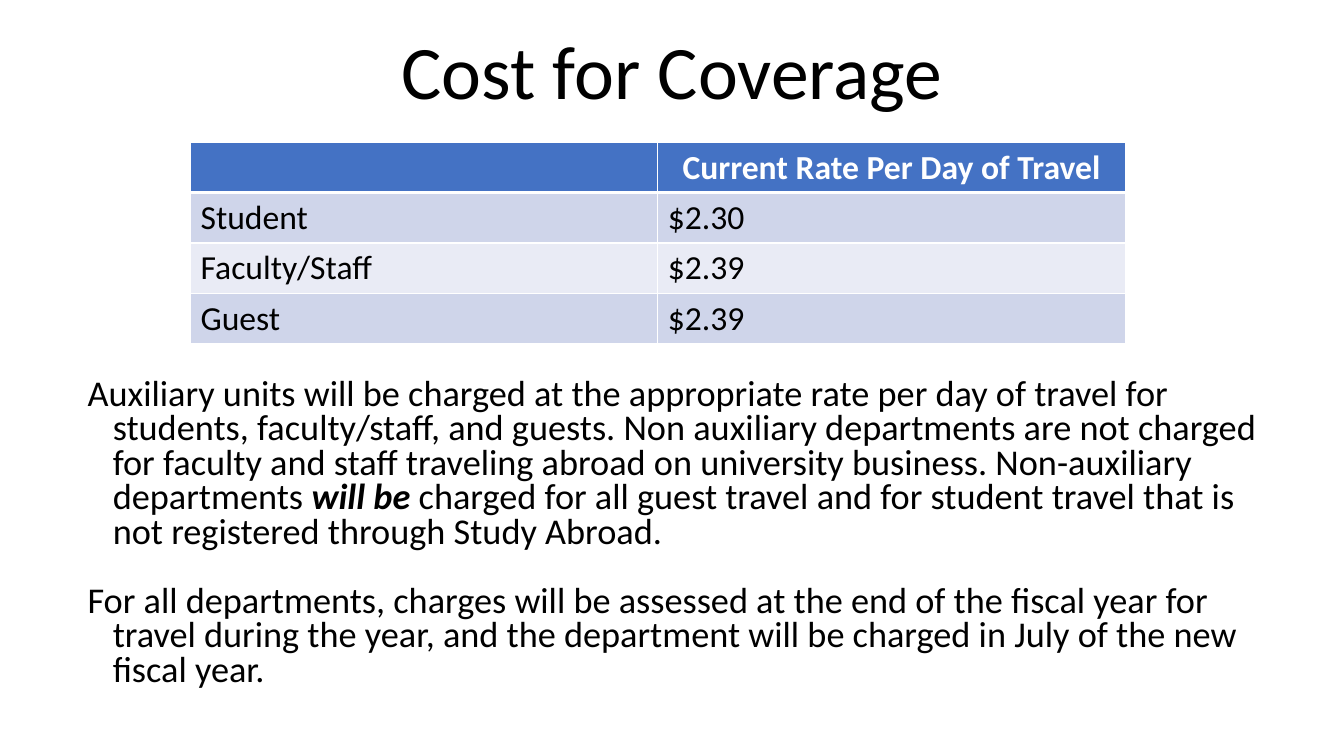
from lxml import etree
from pptx import Presentation
from pptx.dml.color import RGBColor
from pptx.enum.text import MSO_ANCHOR, PP_ALIGN
from pptx.oxml.ns import qn
from pptx.util import Inches, Pt

CENTER, LEFT = PP_ALIGN.CENTER, PP_ALIGN.LEFT
MIDDLE, TOP = MSO_ANCHOR.MIDDLE, MSO_ANCHOR.TOP
FONT = "Calibri"
BLACK = RGBColor(0x00, 0x00, 0x00)
WHITE = RGBColor(0xFF, 0xFF, 0xFF)
HEADER_BLUE = RGBColor(0x44, 0x72, 0xC4)
BAND_DARK = RGBColor(0xCF, 0xD5, 0xEA)
BAND_LIGHT = RGBColor(0xE9, 0xEB, 0xF5)

RATES = [
    ("", "Current Rate Per Day of Travel"),
    ("Student", "$2.30"),
    ("Faculty/Staff", "$2.39"),
    ("Guest", "$2.39"),
]
# Each paragraph is a list of (text, emphasized) pairs.
POLICY = [
    [("Auxiliary units will be charged at the appropriate rate per day of travel for "
      "students, faculty/staff, and guests. Non auxiliary departments are not charged "
      "for faculty and staff traveling abroad on university business. Non-auxiliary "
      "departments ", False),
     ("will be ", True),
     ("charged for all guest travel and for student travel that is not registered "
      "through Study Abroad.", False)],
    [("For all departments, charges will be assessed at the end of the fiscal year for "
      "travel during the year, and the department will be charged in July of the new "
      "fiscal year.", False)],
]


def style_font(font, size, color=BLACK, bold=False, italic=False):
    font.name = FONT
    font.size = Pt(size)
    font.color.rgb = color
    font.bold = bold
    font.italic = italic


def add_text_frame(slide, left, top, width, height, anchor):
    frame = slide.shapes.add_textbox(
        Inches(left), Inches(top), Inches(width), Inches(height)).text_frame
    frame.word_wrap = True
    frame.vertical_anchor = anchor
    return frame


def add_title(slide, left, top, width, height):
    heading = add_text_frame(slide, left, top, width, height, MIDDLE).paragraphs[0]
    heading.text = "Cost for Coverage"
    heading.alignment = CENTER
    style_font(heading.runs[0].font, 54)


def set_cell_borders(cell, bottom_width):
    """Draw white 1 pt edges, with the bottom one as wide as given."""
    properties = cell._tc.get_or_add_tcPr()
    for edge, width in (("lnL", 1), ("lnR", 1), ("lnT", 1), ("lnB", bottom_width)):
        line = etree.SubElement(properties, qn(f"a:{edge}"), w=str(Pt(width)))
        fill = etree.SubElement(line, qn("a:solidFill"))
        etree.SubElement(fill, qn("a:srgbClr"), val=str(WHITE))


def add_rate_table(slide, left, top, width, height):
    table = slide.shapes.add_table(
        len(RATES), len(RATES[0]),
        Inches(left), Inches(top), Inches(width), Inches(height)).table
    for row_index, row in enumerate(RATES):
        is_header = row_index == 0
        band = BAND_DARK if row_index % 2 else BAND_LIGHT
        for column_index, entry in enumerate(row):
            cell = table.cell(row_index, column_index)
            set_cell_borders(cell, 3 if is_header else 1)
            cell.fill.solid()
            cell.fill.fore_color.rgb = HEADER_BLUE if is_header else band
            label = cell.text_frame.paragraphs[0]
            label.text = entry
            label.alignment = CENTER if is_header else LEFT
            for run in label.runs:
                style_font(run.font, 24, WHITE if is_header else BLACK, is_header)
    # The top edge of the first body row shares the header's heavy rule.
    for cell in table.rows[1].cells:
        cell._tc.tcPr.find(qn("a:lnT")).set("w", str(Pt(3)))


def add_policy(slide, left, top, width, height):
    frame = add_text_frame(slide, left, top, width, height, TOP)
    for index, pieces in enumerate(POLICY):
        paragraph = frame.add_paragraph() if index else frame.paragraphs[0]
        paragraph.line_spacing = 0.79
        paragraph.space_before = Pt(25 if index else 0)
        indents = paragraph._p.get_or_add_pPr()
        indents.set("marL", str(Inches(0.25)))
        indents.set("indent", str(Inches(-0.25)))
        for text, emphasized in pieces:
            run = paragraph.add_run()
            run.text = text
            style_font(run.font, 25.9, bold=emphasized, italic=emphasized)


def main():
    presentation = Presentation()
    presentation.slide_width = Inches(13.33)
    presentation.slide_height = Inches(7.5)
    slide = presentation.slides.add_slide(presentation.slide_layouts[6])
    add_title(slide, 2.32, 0.18, 8.69, 1.01)
    add_rate_table(slide, 1.89, 1.41, 9.27, 2)
    add_policy(slide, 0.77, 3.71, 11.91, 3.22)
    presentation.save("out.pptx")


if __name__ == "__main__":
    main()
